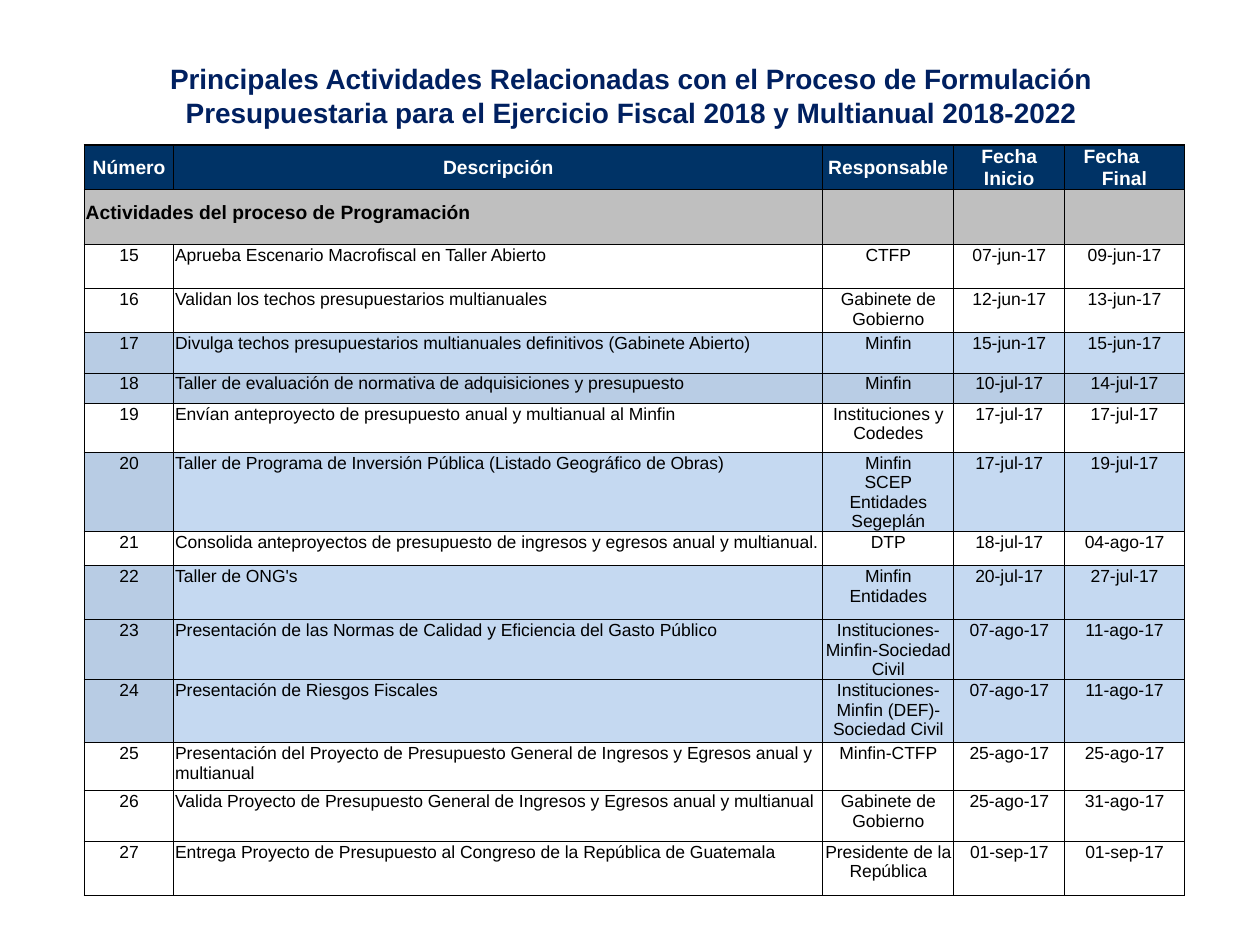
"""Build the slide with the 2018 budget formulation schedule."""
import pptx
import pptx.dml.color
import pptx.enum.text
import pptx.oxml
import pptx.oxml.ns
import pptx.util

Inches, Pt = pptx.util.Inches, pptx.util.Pt
ALIGN = pptx.enum.text.PP_ALIGN
ANCHOR = pptx.enum.text.MSO_ANCHOR
COLORS = {"title": "002060", "header": "003366", "section": "BFBFBF", "plain": "FFFFFF",
          "number": "B8CCE4", "event": "C5D9F1", "workshop": "B9CDE5", "text": "000000"}
COLS = [0.71, 5.15, 1.04, 0.88, 0.95]
HEADER = ["Número", "Descripción", "Responsable", "Fecha\vInicio", "Fecha\nFinal"]
SECTION = ["Actividades del proceso de Programación", "", "", "", ""]
PLAIN = ["plain"] * 5
EVENT = ["number"] + ["event"] * 4
WORKSHOP = ["workshop"] * 5
ACTIVITIES = [
    (0.35, PLAIN, "Aprueba Escenario Macrofiscal en Taller Abierto",
     "CTFP", "07-jun-17", "09-jun-17"),
    (0.35, PLAIN, "Validan los techos presupuestarios multianuales",
     "Gabinete de Gobierno", "12-jun-17", "13-jun-17"),
    (0.32, EVENT, "Divulga techos presupuestarios multianuales definitivos (Gabinete Abierto)",
     "Minfin", "15-jun-17", "15-jun-17"),
    (0.24, WORKSHOP, "Taller de evaluación de normativa de adquisiciones y presupuesto",
     "Minfin", "10-jul-17", "14-jul-17"),
    (0.39, PLAIN, "Envían anteproyecto de presupuesto anual y multianual al Minfin",
     "Instituciones y Codedes", "17-jul-17", "17-jul-17"),
    (0.43, EVENT, "Taller de Programa de Inversión Pública (Listado Geográfico de Obras)",
     "Minfin\vSCEP\vEntidades\vSegeplán", "17-jul-17", "19-jul-17"),
    (0.27, PLAIN, "Consolida anteproyectos de presupuesto de ingresos y egresos anual y multianual.",
     "DTP", "18-jul-17", "04-ago-17"),
    (0.43, EVENT, "Taller de ONG's",
     "Minfin\vEntidades", "20-jul-17", "27-jul-17"),
    (0.43, EVENT, "Presentación de las Normas de Calidad y Eficiencia del Gasto Público",
     "Instituciones-Minfin-Sociedad Civil", "07-ago-17", "11-ago-17"),
    (0.5, EVENT, "Presentación de Riesgos Fiscales",
     "Instituciones-Minfin (DEF)-Sociedad Civil", "07-ago-17", "11-ago-17"),
    (0.38, PLAIN, "Presentación del Proyecto de Presupuesto General de Ingresos y Egresos "
     "anual y multianual", "Minfin-CTFP", "25-ago-17", "25-ago-17"),
    (0.4, PLAIN, "Valida Proyecto de Presupuesto General de Ingresos y Egresos anual y multianual",
     "Gabinete de Gobierno", "25-ago-17", "31-ago-17"),
    (0.43, PLAIN, "Entrega Proyecto de Presupuesto al Congreso de la República de Guatemala",
     "Presidente de la República", "01-sep-17", "01-sep-17"),
]


def format_text(tf, size, color, bold, align):
    for p in tf.paragraphs:
        p.alignment = align
        for r in p.runs:
            r.font.name, r.font.size, r.font.bold = "Arial", Pt(size), bold
            r.font.color.rgb = pptx.dml.color.RGBColor.from_string(COLORS[color])


def add_border(cell, side, width):
    cell._tc.get_or_add_tcPr().append(pptx.oxml.parse_xml(
        f'<a:ln{side} {pptx.oxml.ns.nsdecls("a")} w="{Pt(width)}"><a:solidFill>'
        f'<a:srgbClr val="{COLORS["text"]}"/></a:solidFill></a:ln{side}>'))


prs = pptx.Presentation()
prs.slide_width, prs.slide_height = Inches(10), Inches(7.5)
s = prs.slides.add_slide(prs.slide_layouts[5])

title = s.shapes.title
title.left, title.top = Inches(0.51), Inches(0.13)
title.width, title.height = Inches(9), Inches(1.25)
tf = title.text_frame
tf.text = ("Principales Actividades Relacionadas con el Proceso de Formulación "
           "Presupuestaria para el Ejercicio Fiscal 2018 y Multianual 2018-2022")
tf.vertical_anchor = ANCHOR.MIDDLE
format_text(tf, 16, "title", True, ALIGN.CENTER)

rows = [(0.29, ["header"] * 5, HEADER), (0.44, ["section"] * 5, SECTION)]
for number, (height, fills, *texts) in enumerate(ACTIVITIES, 15):
    rows.append((height, fills, [str(number)] + texts))

table = s.shapes.add_table(len(rows), len(COLS), Inches(0.67), Inches(1.15),
                           Inches(sum(COLS)), Inches(sum(row[0] for row in rows))).table
table.first_row = table.horz_banding = False
for col, width in zip(table.columns, COLS):
    col.width = Inches(width)

for i, (height, fills, texts) in enumerate(rows):
    table.rows[i].height = Inches(height)
    for j, text in enumerate(texts):
        cell = table.cell(i, j)
        cell.margin_left = cell.margin_right = cell.margin_top = Inches(0.01)
        cell.margin_bottom = 0
        cell.vertical_anchor = ANCHOR.MIDDLE if i == 0 else ANCHOR.TOP
        cell.text_frame.text = text
        left = i == 1 or (i > 1 and j == 1)
        format_text(cell.text_frame, 11 if i < 2 else 10, "plain" if i == 0 else "text",
                    i < 2, ALIGN.LEFT if left else ALIGN.CENTER)
        add_border(cell, "L", 1 if j == 0 else 0.5)
        add_border(cell, "R", 1 if j == len(COLS) - 1 else 0.5)
        add_border(cell, "T", 1 if i == 0 else 0.5)
        add_border(cell, "B", 0.5)
        cell.fill.solid()
        cell.fill.fore_color.rgb = pptx.dml.color.RGBColor.from_string(COLORS[fills[j]])

section = table.cell(1, 0)
section.merge(table.cell(1, 1))
section.vertical_anchor = ANCHOR.BOTTOM
section.margin_bottom = Inches(0.17)

p = table.cell(0, 4).text_frame.paragraphs[0]
p.alignment = ALIGN.LEFT
p._p.get_or_add_pPr().set("marL", str(Inches(0.14)))

prs.save("out.pptx")
